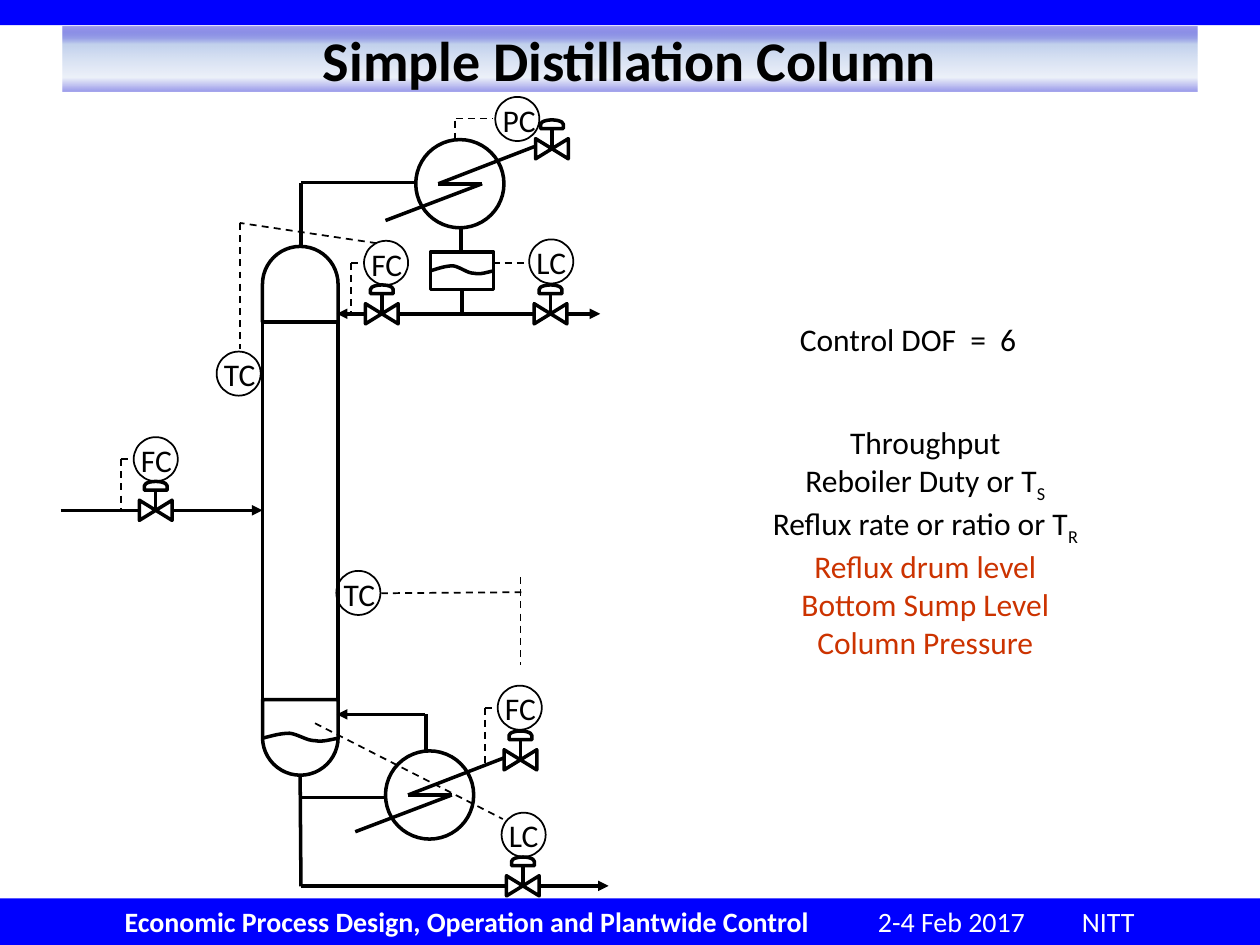
from lxml.etree import SubElement
from pptx import Presentation
from pptx.dml.color import RGBColor
from pptx.enum.dml import MSO_LINE
from pptx.enum.shapes import MSO_CONNECTOR, MSO_SHAPE as Preset
from pptx.enum.text import MSO_ANCHOR as Anchor, PP_ALIGN as Align
from pptx.oxml.ns import qn
from pptx.util import Pt

COLORS = {"bar": "0000FF", "ink": "000000", "paper": "FFFFFF", "accent": "CC3300"}
# Position %, colour, opacity %
TITLE_STOPS = [(1, "0000CC", 39), (27, "C2D1ED", 100), (78, "D2DDF1", 40), (100, "0000CC", 40)]
# Liquid surface as three Bezier curves: share of the width, offset in points
WAVE = [
    [(0, 0), (0.12, -1.4), (0.24, -2.9), (0.36, -2.9)],
    [(0.36, -2.9), (0.48, -2.2), (0.58, 1.4), (0.7, 1.4)],
    [(0.7, 1.4), (0.8, 2.2), (0.9, 0.7), (1, 0)],
]
HEAVY, THIN = 2, 1


class FlowSheet:
    font = "Calibri"

    def __init__(self, slide):
        self.slide = slide

    def color(self, name):
        return RGBColor.from_string(COLORS[name])

    def shape(self, preset, left, top, width, height, fill=None, line=HEAVY, rotation=0):
        shape = self.slide.shapes.add_shape(preset, Pt(left), Pt(top), Pt(width), Pt(height))
        shape.rotation = rotation
        self.paint(shape, fill, line)
        return shape

    def paint(self, shape, fill, line):
        shape.shadow.inherit = False
        if fill:
            shape.fill.solid()
            shape.fill.fore_color.rgb = self.color(fill)
        else:
            shape.fill.background()
        if line:
            shape.line.color.rgb = self.color("ink")
            shape.line.width = Pt(line)
        else:
            shape.line.fill.background()

    def gradient(self, shape, stops):
        shape.fill.gradient()
        gradient = shape._element.spPr.find(qn("a:gradFill"))
        stop_list = gradient.find(qn("a:gsLst"))
        for old in list(stop_list):
            stop_list.remove(old)
        for position, color, opacity in stops:
            stop = SubElement(stop_list, qn("a:gs"), pos=str(position * 1000))
            value = SubElement(stop, qn("a:srgbClr"), val=color)
            SubElement(value, qn("a:alpha"), val=str(opacity * 1000))
        gradient.find(qn("a:lin")).set("ang", "5400000")

    def format(self, paragraph, size=18, color="ink", bold=False, align=Align.LEFT):
        paragraph.alignment = align
        for run in paragraph.runs:
            run.font.name = self.font
            run.font.size = Pt(size)
            run.font.bold = bold
            run.font.color.rgb = self.color(color)

    def text(self, left, top, width, height, lines, align=Align.LEFT):
        """Each line is (text, subscript, colour)."""
        box = self.slide.shapes.add_textbox(Pt(left), Pt(top), Pt(width), Pt(height))
        frame = box.text_frame
        frame.word_wrap = False
        frame.text = "\n".join(words for words, _, _ in lines)
        for paragraph, (_, subscript, color) in zip(frame.paragraphs, lines):
            if subscript:
                run = paragraph.add_run()
                run.text = subscript
                run.font._element.set("baseline", "-25000")
            self.format(paragraph, color=color, align=align)

    def line(self, x1, y1, x2, y2, width=HEAVY, dashed=False, head=False, tail=False):
        connector = self.slide.shapes.add_connector(
            MSO_CONNECTOR.STRAIGHT, Pt(x1), Pt(y1), Pt(x2), Pt(y2))
        connector.line.color.rgb = self.color("ink")
        connector.line.width = Pt(width)
        if dashed:
            connector.line.dash_style = MSO_LINE.DASH
        for wanted, tag in ((head, "a:headEnd"), (tail, "a:tailEnd")):
            if wanted:
                SubElement(connector.line._get_or_add_ln(), qn(tag), type="triangle")
        SubElement(connector._element.spPr, qn("a:effectLst"))

    def signal(self, x1, y1, x2, y2):
        self.line(x1, y1, x2, y2, THIN, dashed=True)

    def circle(self, x, y, diameter, line):
        self.shape(Preset.OVAL, x - diameter / 2, y - diameter / 2, diameter, diameter, line=line)

    def liquid_level(self, left, y, width):
        points = []
        for a, b, c, d in WAVE:
            for step in range(9):
                t = step / 8
                weights = ((1 - t) ** 3, 3 * t * (1 - t) ** 2, 3 * t * t * (1 - t), t ** 3)
                across, offset = (sum(w * p[i] for w, p in zip(weights, (a, b, c, d)))
                                  for i in (0, 1))
                points.append((Pt(left + across * width), Pt(y + offset)))
        builder = self.slide.shapes.build_freeform(*points[0])
        builder.add_line_segments(points[1:], close=False)
        self.paint(builder.convert_to_shape(), None, HEAVY)

    def exchanger(self, x, y):
        self.circle(x, y, 50.4, HEAVY)
        zigzag = [(42.5, -21.2), (-12.3, 0), (12.7, 0), (-42.5, 21)]
        for (x1, y1), (x2, y2) in zip(zigzag, zigzag[1:]):
            self.line(x + x1, y + y1, x + x2, y + y2)

    def valve(self, x, y):
        self.shape(Preset.FLOWCHART_COLLATE, x - 5.75, y - 9.35, 11.5, 18.7, "paper", rotation=270)
        self.shape(Preset.FLOWCHART_DELAY, x - 2.5, y - 20.5, 5, 13, rotation=270)
        self.line(x, y, x, y - 11.5)

    def controller(self, label, x, y):
        self.text(x - 15.5, y - 14, 36, 29, [(label, "", "ink")])
        self.circle(x, y, 25.2, THIN)

    def flow_controller(self, x, y, drop):
        self.controller("FC", x, y)
        self.signal(x - 20, y, x - 12.6, y)
        self.signal(x - 20, y, x - 20, y + drop)


def main():
    presentation = Presentation()
    presentation.slide_width, presentation.slide_height = Pt(720), Pt(540)
    sheet = FlowSheet(presentation.slides.add_slide(presentation.slide_layouts[6]))

    # Top bar, footer and title
    sheet.shape(Preset.RECTANGLE, 0, 0, 720, 14.4, "bar", None)
    footer = sheet.shape(Preset.RECTANGLE, 0, 513.4, 720, 26.6, "bar", None)
    footer.text_frame.margin_left = Pt(71.2)
    paragraph = footer.text_frame.paragraphs[0]
    paragraph.text = "Economic Process Design, Operation and Plantwide Control"
    paragraph.add_run().text = "\t2-4 Feb 2017\tNITT"
    sheet.format(paragraph, 16, "paper")
    paragraph.runs[0].font.bold = True
    tabs = SubElement(paragraph._p.get_or_add_pPr(), qn("a:tabLst"))
    for position in (430.5, 547):
        SubElement(tabs, qn("a:tab"), pos=str(Pt(position)), algn="l")

    title = sheet.shape(Preset.RECTANGLE, 36, 15.1, 648, 37.4, line=None)
    sheet.gradient(title, TITLE_STOPS)
    title.text_frame.text = "Simple Distillation Column"
    title.text_frame.vertical_anchor = Anchor.MIDDLE
    sheet.format(title.text_frame.paragraphs[0], 32, bold=True, align=Align.CENTER)

    # Column, reflux drum and liquid levels
    sheet.shape(Preset.RECTANGLE, 150, 183.8, 43.2, 216)
    for top, rotation in ((140.8, 270), (399.8, 90)):
        sheet.shape(Preset.FLOWCHART_DELAY, 150, top, 43.2, 43.2, rotation=rotation)
    sheet.shape(Preset.RECTANGLE, 246, 144, 36, 21.6)
    sheet.liquid_level(246, 154.8, 36)
    sheet.liquid_level(150, 421.9, 43.2)

    # Condenser and reboiler
    sheet.exchanger(262.8, 105)
    sheet.exchanger(245.5, 454.3)

    # Pipes
    for pipe in [(172, 140.5, 172, 104.4), (172, 104.4, 237, 104.4), (263.5, 130.3, 263.5, 143.5),
                 (264, 165.6, 264, 179.3), (171.5, 443.5, 172, 506.5), (172, 455.8, 220.3, 455.8),
                 (243.4, 408.2, 243.4, 429.8)]:
        sheet.line(*pipe)
    sheet.line(192.5, 179.3, 343, 179.3, head=True, tail=True)
    for pipe in [(172, 506.2, 347.8, 506.2), (243, 408.2, 192.5, 408.2), (34.6, 291.6, 150, 291.6)]:
        sheet.line(*pipe, tail=True)

    # Valves
    for x, y in [(89, 291.6), (218.2, 179.3), (314.6, 179.3), (315.4, 85), (297.4, 434.2),
                 (298.8, 506.2)]:
        sheet.valve(x, y)

    # Controllers and their signals
    for x, y, drop in [(89, 262.4, 29.9), (297, 404.4, 33.5), (220.6, 150.2, 29.9)]:
        sheet.flow_controller(x, y, drop)
    for label, x, y in [("LC", 315, 149.4), ("PC", 295.6, 68), ("LC", 299.2, 477),
                        ("TC", 204.8, 338.8), ("TC", 136.4, 213.5)]:
        sheet.controller(label, x, y)
    for signal in [(281.5, 150.5, 303, 150.5), (260.5, 67.7, 282, 67.7), (260, 69, 260, 80),
                   (180, 413.3, 287.3, 468), (298, 338.4, 218, 339), (297.5, 329.8, 297.5, 380),
                   (137.3, 127.4, 137.3, 199.4), (215.3, 139, 137, 127.4)]:
        sheet.signal(*signal)

    # Degrees of freedom
    sheet.text(450, 179.3, 139.7, 28.8, [("Control DOF  =  6", "", "ink")])
    sheet.text(432.7, 238.3, 192.2, 138.2, [
        ("Throughput", "", "ink"),
        ("Reboiler Duty or T", "S", "ink"),
        ("Reflux rate or ratio or T", "R", "ink"),
        ("Reflux drum level", "", "accent"),
        ("Bottom Sump Level", "", "accent"),
        ("Column Pressure", "", "accent"),
    ], Align.CENTER)

    presentation.save("out.pptx")


if __name__ == "__main__":
    main()
